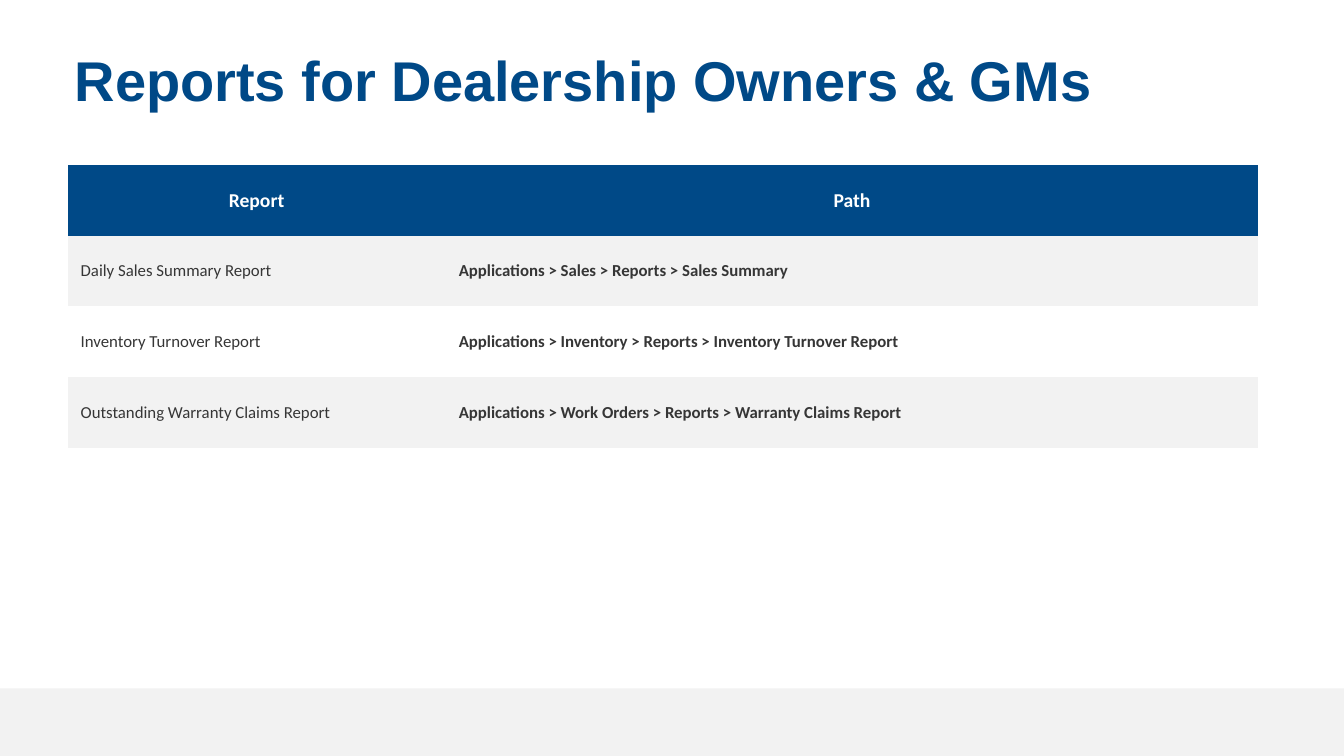
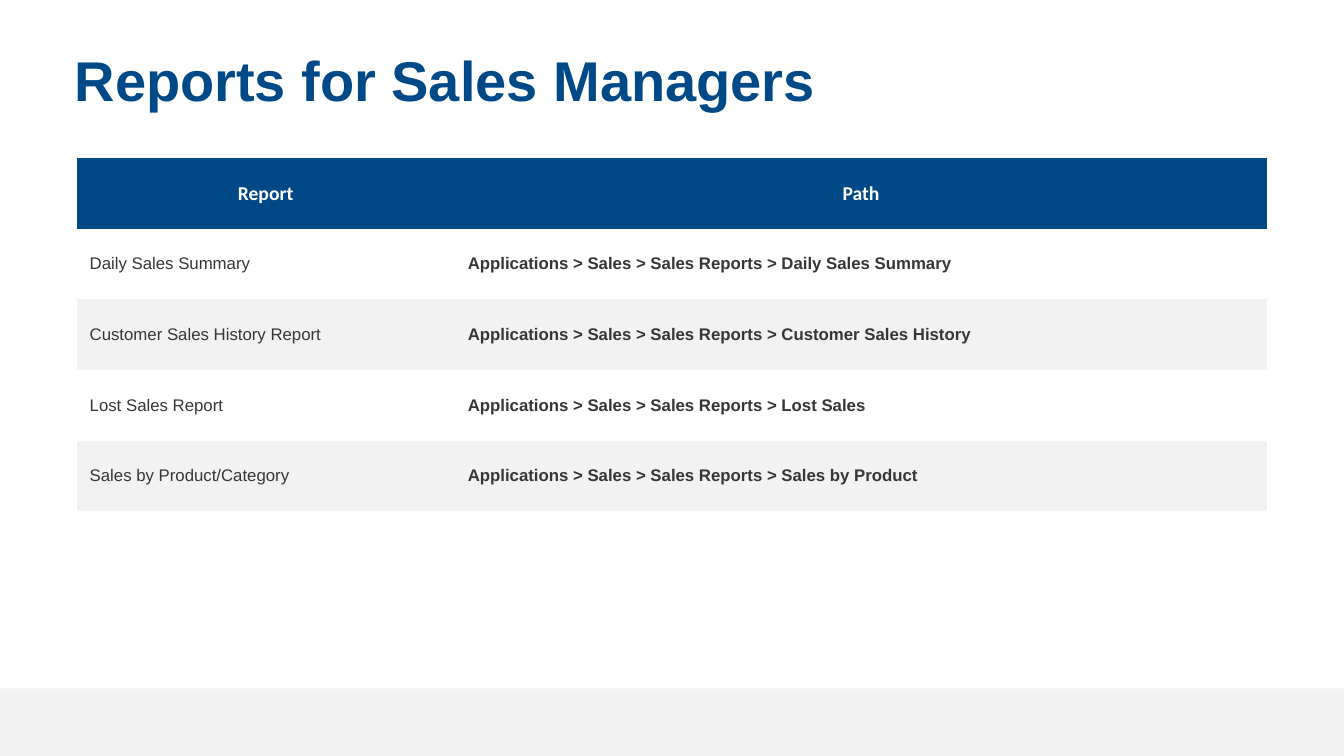
from pptx import Presentation
from pptx.dml.color import RGBColor
from pptx.enum.shapes import MSO_SHAPE
from pptx.enum.text import MSO_ANCHOR, MSO_AUTO_SIZE, PP_ALIGN
from pptx.oxml.ns import qn
from pptx.util import Inches, Pt

NAVY = RGBColor(0x00, 0x49, 0x87)
GRAY = RGBColor(0xF2, 0xF2, 0xF2)
WHITE = RGBColor(0xFF, 0xFF, 0xFF)
INK = RGBColor(0x36, 0x36, 0x36)
TITLE_FONT = "Arial"
HEADER_FONT = "Calibri"
PLAIN_TABLE_STYLE = "{2D5ABB26-0587-4C30-8999-92F81FD0307C}"
COLUMN_WIDTHS = (3.75, 8.06)
ROW_HEIGHT = 0.7
HEADINGS = ("Report", "Path")

OWNER_REPORTS = [
    ("Daily Sales Summary Report", "Applications > Sales > Reports > Sales Summary"),
    ("Inventory Turnover Report", "Applications > Inventory > Reports > Inventory Turnover Report"),
    ("Outstanding Warranty Claims Report", "Applications > Work Orders > Reports > Warranty Claims Report"),
]
SALES_REPORTS = [
    ("Daily Sales Summary", "Applications > Sales > Sales Reports > Daily Sales Summary"),
    ("Customer Sales History Report", "Applications > Sales > Sales Reports > Customer Sales History"),
    ("Lost Sales Report", "Applications > Sales > Sales Reports > Lost Sales"),
    ("Sales by Product/Category", "Applications > Sales > Sales Reports > Sales by Product"),
]


def add_run(paragraph, text, font_name, size, color, bold):
    run = paragraph.add_run()
    run.text = text
    run.font.name = font_name
    run.font.size = Pt(size)
    run.font.color.rgb = color
    run.font.bold = bold


def format_title_layout(layout):
    title = layout.placeholders[0]
    title.left, title.top = Inches(0.67), Inches(0.4)
    title.width, title.height = Inches(12.11), Inches(1.07)
    frame = title.text_frame
    frame.margin_left = frame.margin_right = Inches(0.07)
    frame.margin_top = frame.margin_bottom = Inches(0.08)
    frame.vertical_anchor = MSO_ANCHOR.TOP
    frame.auto_size = MSO_AUTO_SIZE.NONE


def add_footer_band(slide, master):
    band = slide.shapes.add_shape(
        MSO_SHAPE.RECTANGLE, 0, Inches(6.83), Inches(13.33), Inches(0.67)
    )
    band.shadow.inherit = False
    band.fill.solid()
    band.fill.fore_color.rgb = GRAY
    band.line.fill.background()
    master.shapes.element.insert(2, band.element)


def add_title(slide, text):
    paragraph = slide.shapes.title.text_frame.paragraphs[0]
    paragraph.alignment = PP_ALIGN.LEFT
    paragraph.line_spacing = Pt(46)
    add_run(paragraph, text, TITLE_FONT, 40, NAVY, True)


def fill_cell(cell, text, fill, font_name, size, color, bold, alignment):
    cell.fill.solid()
    cell.fill.fore_color.rgb = fill
    cell.vertical_anchor = MSO_ANCHOR.MIDDLE
    cell.margin_left = cell.margin_right = Inches(0.13)
    cell.margin_top = cell.margin_bottom = Inches(0.05)
    paragraph = cell.text_frame.paragraphs[0]
    paragraph.alignment = alignment
    add_run(paragraph, text, font_name, size, color, bold)


def add_report_table(slide, left, top, reports, body_font, band_fills):
    row_count = len(reports) + 1
    table = slide.shapes.add_table(
        row_count, len(HEADINGS), Inches(left), Inches(top),
        Inches(sum(COLUMN_WIDTHS)), Inches(ROW_HEIGHT * row_count),
    ).table
    table.horz_banding = False
    table._tbl.tblPr.find(qn("a:tableStyleId")).text = PLAIN_TABLE_STYLE
    for column, width in zip(table.columns, COLUMN_WIDTHS):
        column.width = Inches(width)
    for column_index, heading in enumerate(HEADINGS):
        fill_cell(table.cell(0, column_index), heading, NAVY,
                  HEADER_FONT, 14, WHITE, True, PP_ALIGN.CENTER)
    for row_index, report in enumerate(reports, start=1):
        fill = band_fills[(row_index - 1) % 2]
        for column_index, text in enumerate(report):
            fill_cell(table.cell(row_index, column_index), text, fill,
                      body_font, 12, INK, column_index == 1, PP_ALIGN.LEFT)


def main():
    presentation = Presentation()
    presentation.slide_width = Inches(13.33)
    presentation.slide_height = Inches(7.5)
    layout = presentation.slide_layouts.get_by_name("Title Only")
    format_title_layout(layout)

    owners_slide = presentation.slides.add_slide(layout)
    add_footer_band(owners_slide, presentation.slide_master)
    add_title(owners_slide, "Reports for Dealership Owners & GMs")
    add_report_table(owners_slide, 0.67, 1.64, OWNER_REPORTS, "Calibri", (GRAY, WHITE))

    sales_slide = presentation.slides.add_slide(layout)
    add_title(sales_slide, "Reports for Sales Managers")
    add_report_table(sales_slide, 0.76, 1.57, SALES_REPORTS, "Arial", (WHITE, GRAY))

    presentation.save("out.pptx")


if __name__ == "__main__":
    main()
